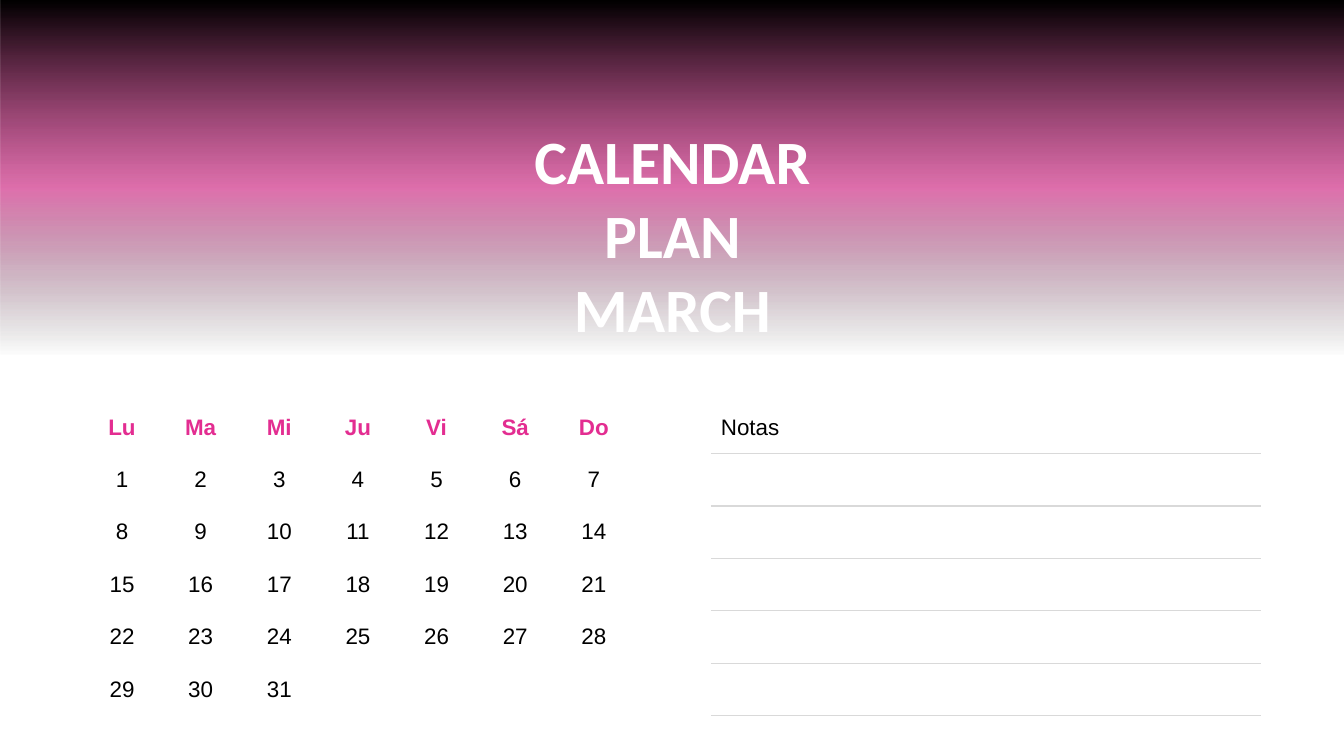
from lxml import etree
from pptx import Presentation
from pptx.dml.color import RGBColor
from pptx.enum.shapes import MSO_SHAPE
from pptx.enum.text import MSO_ANCHOR, MSO_AUTO_SIZE, PP_ALIGN
from pptx.oxml import parse_xml
from pptx.oxml.ns import qn
from pptx.util import Inches, Pt

RECT = MSO_SHAPE.RECTANGLE
MIDDLE = MSO_ANCHOR.MIDDLE
GROW = MSO_AUTO_SIZE.SHAPE_TO_FIT_TEXT
LEFT, CENTER = PP_ALIGN.LEFT, PP_ALIGN.CENTER

BLACK = RGBColor(0x00, 0x00, 0x00)
WHITE = RGBColor(0xFF, 0xFF, 0xFF)
PINK = RGBColor(0xE3, 0x2D, 0x91)
ROSE = RGBColor(0xCB, 0x1A, 0x7B)
GRAY = RGBColor(0xD9, 0xD9, 0xD9)

NS = 'xmlns:a="http://schemas.openxmlformats.org/drawingml/2006/main"'
NO_GRID = "{2D5ABB26-0587-4C30-8999-92F81FD0307C}"
ROW_H = 0.52


class Page:
    head_font = "Calibri"
    body_font = "Arial"

    def __init__(self, slide):
        self.slide = slide

    def style(self, para, font, size, color, bold, align):
        para.alignment = align
        for run in para.runs:
            run.font.name = font
            run.font.size = Pt(size)
            run.font.bold = bold
            run.font.color.rgb = color

    def banner(self, width, height, stops):
        """Draw a faded band; stops are (percent, color, opacity)."""
        box = self.slide.shapes.add_shape(RECT, 0, 0, Inches(width), Inches(height))
        box.shadow.inherit = False
        box.rotation = 180
        box.line.fill.background()
        marks = "".join(
            f'<a:gs pos="{pos * 1000}"><a:srgbClr val="{color}">'
            f'<a:alpha val="{alpha * 1000}"/></a:srgbClr></a:gs>'
            for pos, color, alpha in stops)
        fade = parse_xml(f'<a:gradFill {NS} rotWithShape="1"><a:gsLst>{marks}</a:gsLst>'
                         '<a:lin ang="16200000" scaled="0"/></a:gradFill>')
        box._element.spPr.find(qn("a:prstGeom")).addnext(fade)

    def title(self, left, top, width, height, lines):
        box = self.slide.shapes.add_textbox(
            Inches(left), Inches(top), Inches(width), Inches(height))
        frame = box.text_frame
        frame.word_wrap = True
        frame.auto_size = GROW
        frame.text = "\n".join(lines)
        for para in frame.paragraphs:
            self.style(para, self.head_font, 44, WHITE, True, CENTER)

    def table(self, left, top, widths, rows, align, head, bold, rule=None):
        """Draw a plain table, with a rule under each row if one is given."""
        frame = self.slide.shapes.add_table(
            len(rows), len(widths), Inches(left), Inches(top),
            Inches(sum(widths)), Inches(ROW_H * len(rows)))
        table = frame.table
        table.first_row = bold
        table.horz_banding = False
        table._tbl.tblPr.find(qn("a:tableStyleId")).text = NO_GRID
        for col, width in zip(table.columns, widths):
            col.width = Inches(width)
        for r, row in enumerate(rows):
            table.rows[r].height = Inches(ROW_H)
            for c, text in enumerate(row):
                cell = table.cell(r, c)
                cell.fill.background()
                cell.vertical_anchor = MIDDLE
                cell.text_frame.text = text
                self.style(cell.text_frame.paragraphs[0], self.body_font, 16,
                           BLACK if r else head, bold and r == 0, align)
                if rule is not None:
                    self.under(cell, rule)

    def under(self, cell, color):
        edge = etree.Element(qn("a:lnB"), w=str(Pt(1)))
        fill = etree.SubElement(edge, qn("a:solidFill"))
        etree.SubElement(fill, qn("a:srgbClr"), val=str(color))
        cell._tc.get_or_add_tcPr().insert(0, edge)


def main():
    deck = Presentation()
    deck.slide_width, deck.slide_height = Inches(13.33), Inches(7.5)
    page = Page(deck.slides.add_slide(deck.slide_layouts[6]))

    # Month grid: a Monday start, 31 days
    days = ["Lu", "Ma", "Mi", "Ju", "Vi", "Sá", "Do"]
    weeks = [[str(day) if day <= 31 else "" for day in range(first, first + 7)]
             for first in range(1, 32, 7)]
    page.table(0.82, 3.98, [0.78] * 7, [days] + weeks, CENTER, PINK, True)

    # Banner and title
    page.banner(13.33, 3.52, [(0, BLACK, 100), (53, ROSE, 62), (100, BLACK, 0)])
    page.title(4.54, 1.17, 4.26, 1.58, ["CALENDAR PLAN", "MARCH"])

    # Ruled notes
    notes = [["Notas"] + [""] * 4] + [[""] * 5 for _ in weeks]
    page.table(7.05, 3.98, [1.9] + [0.89] * 4, notes, LEFT, BLACK, False, GRAY)

    deck.save("out.pptx")


if __name__ == "__main__":
    main()
